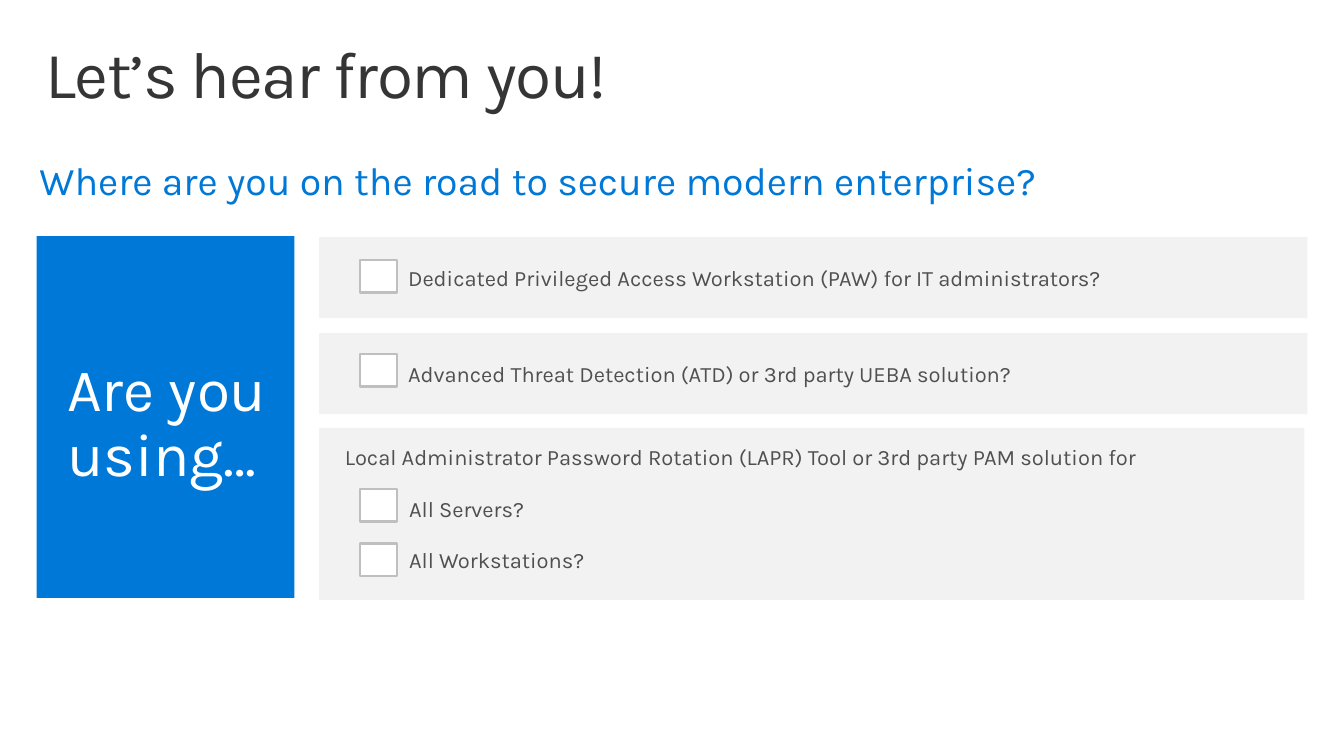
from pptx import Presentation
from pptx.dml.color import RGBColor
from pptx.enum import shapes, text
from pptx.util import Inches, Pt

COLORS = {
    "title": "353535",
    "blue": "0078D7",
    "white": "FFFFFF",
    "panel": "F2F2F2",
    "body": "505050",
    "box_line": "BFBFBF",
}
FONT = "Karla"
PANEL_LEFT = 3.23
PANEL_INSETS = (0.2, 0.16, 0.2, 0.16)

prs = Presentation()
prs.slide_width, prs.slide_height = Inches(13.6), Inches(7.65)
slide = prs.slides.add_slide(prs.slide_layouts[6])


def add_rect(left, top, width, height, fill, line=None):
    rect = slide.shapes.add_shape(
        shapes.MSO_SHAPE.RECTANGLE, Inches(left), Inches(top), Inches(width), Inches(height))
    rect.shadow.inherit = False
    rect.fill.solid()
    rect.fill.fore_color.rgb = RGBColor.from_string(COLORS[fill])
    if line:
        rect.line.color.rgb = RGBColor.from_string(COLORS[line])
        rect.line.width = Pt(1.75)
    else:
        rect.line.fill.background()
    return rect


def write(holder, lines, size, color, insets, anchor=text.MSO_ANCHOR.TOP, indents=(0,)):
    """Fill a shape with one left-aligned paragraph per line and return the paragraphs."""
    frame = holder.text_frame
    frame.word_wrap = True
    frame.vertical_anchor = anchor
    frame.margin_left, frame.margin_top, frame.margin_right, frame.margin_bottom = map(Inches, insets)
    frame.text = "\n".join(lines)
    for paragraph, indent in zip(frame.paragraphs, indents):
        paragraph.alignment = text.PP_ALIGN.LEFT
        paragraph.font.name = FONT
        paragraph.font.size = Pt(size)
        paragraph.font.color.rgb = RGBColor.from_string(COLORS[color])
        if indent:
            properties = paragraph._p.get_or_add_pPr()
            properties.set("marL", str(Inches(indent)))
            properties.set("indent", "0")
    return frame.paragraphs


# Headings
title = slide.shapes.add_textbox(Inches(0.3), Inches(0.32), Inches(13), Inches(1))
heading = write(title, ["Let’s hear from you!"], 48, "title", (0.16, 0.1, 0.16, 0.1))[0]
heading.line_spacing = 0.9
heading.runs[0].font._element.set("spc", "-100")

question = slide.shapes.add_textbox(Inches(0.4), Inches(1.58), Inches(10.34), Inches(0.49))
write(question, ["Where are you on the road to secure modern enterprise?"], 28.6, "blue", (0, 0, 0, 0))

# Blue prompt
prompt = add_rect(0.37, 2.39, 2.61, 3.66, "blue")
prompt_line = write(prompt, ["Are you using…"], 44, "white", (0.31, 0.31, 0.2, 0.16),
                    text.MSO_ANCHOR.MIDDLE)[0]
prompt_line.line_spacing = 0.9
prompt_line.space_after = Pt(12)

# Single-answer panels
for top, option in [
    (2.4, "Dedicated Privileged Access Workstation (PAW) for IT administrators?"),
    (3.37, "Advanced Threat Detection (ATD) or 3rd party UEBA solution?"),
]:
    panel = add_rect(PANEL_LEFT, top, 10, 0.82, "panel")
    write(panel, [option], 16, "body", PANEL_INSETS, text.MSO_ANCHOR.MIDDLE, [0.7])

# Password panel with two answers
password_panel = add_rect(PANEL_LEFT, 4.33, 9.97, 1.74, "panel")
password_lines = write(
    password_panel,
    ["Local Administrator Password Rotation (LAPR) Tool or 3rd party PAM solution for",
     "All Servers?",
     "All Workstations?"],
    16, "body", PANEL_INSETS, indents=[0.06, 0.71, 0.71])
for paragraph in password_lines:
    paragraph.space_after = Pt(6.1)
for answer in password_lines[1:]:
    answer.level = 1
    answer.space_before = Pt(12.2)

# Checkboxes
for top in (2.63, 3.58, 4.95, 5.5):
    add_rect(3.64, top, 0.38, 0.33, "white", "box_line")

prs.save("out.pptx")
